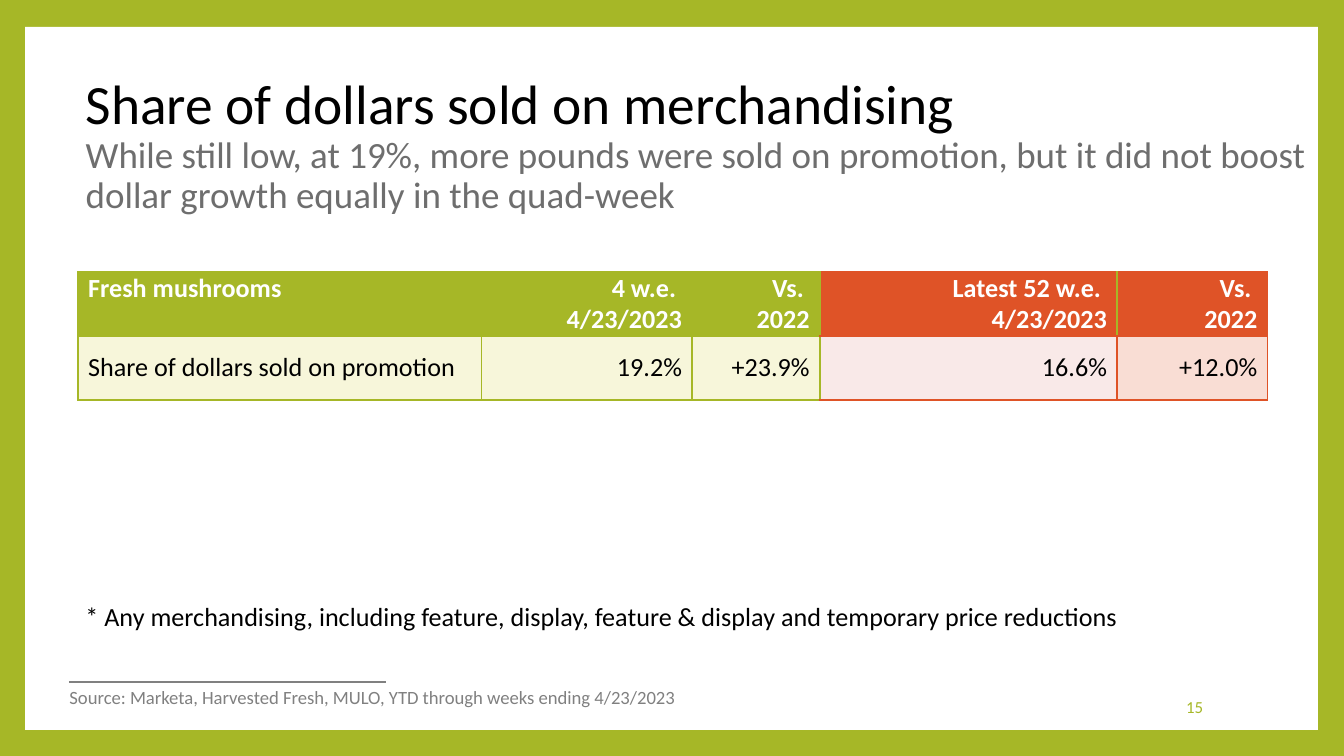
from pptx import Presentation
from pptx.dml.color import RGBColor
from pptx.enum.shapes import MSO_CONNECTOR, MSO_SHAPE
from pptx.enum.text import MSO_ANCHOR, PP_ALIGN
from pptx.oxml.ns import qn
from pptx.util import Pt
from lxml.etree import SubElement

PX = 5715  # EMU in one px, 160 px to the inch

GREEN = RGBColor(0xA6, 0xB7, 0x27)
ORANGE = RGBColor(0xDF, 0x53, 0x27)
CREAM = RGBColor(0xF7, 0xF6, 0xDA)
BLUSH = RGBColor(0xF9, 0xE9, 0xE8)
PEACH = RGBColor(0xF9, 0xDD, 0xD4)
WHITE = RGBColor(0xFF, 0xFF, 0xFF)
BLACK = RGBColor(0, 0, 0)
GRAY = RGBColor(0x80, 0x80, 0x80)
DARK_GRAY = RGBColor(0x6E, 0x6E, 0x6E)

COLUMNS = [480, 251, 152, 354, 179]
ROWS = [76, 76]
HEADER = ["Fresh mushrooms", "4 w.e. \n4/23/2023", "Vs. \n2022",
          " Latest 52 w.e. \n4/23/2023", "Vs. \n2022"]
SHARES = ["Share of dollars sold on promotion", "19.2%", "+23.9%", "16.6%", "+12.0%"]
FILLS = [[GREEN] * 3 + [ORANGE] * 2, [CREAM] * 3 + [BLUSH, PEACH]]
# Sides (left, right, top, bottom) drawn in orange; all others are green
ORANGE_SIDES = {(0, 3): "TB", (0, 4): "RTB", (1, 3): "RTB", (1, 4): "LRTB"}


def scale(*lengths):
    return [length * PX for length in lengths]


def set_values(target, values):
    for name, value in values.items():
        setattr(target, name, value)


def style_span(span, size, color, bold=False):
    set_values(span.font, {"name": "Calibri", "size": Pt(size), "bold": bold})
    span.font.color.rgb = color


def add_frame(page, box):
    """White panel and footer rule on the green page."""
    page.background.fill.solid()
    page.background.fill.fore_color.rgb = GREEN
    panel = page.shapes.add_shape(MSO_SHAPE.RECTANGLE, *scale(*box))
    panel.shadow.inherit = False
    panel.fill.solid()
    panel.fill.fore_color.rgb = WHITE
    panel.line.fill.background()

    left, top = box[0] + 52, box[1] + 780
    rule = page.shapes.add_connector(
        MSO_CONNECTOR.STRAIGHT, *scale(left, top, left + 377, top))
    rule.line.color.rgb = GRAY
    rule.line.width = Pt(0.79)
    SubElement(rule._element.spPr, qn("a:effectLst"))


def add_title(page, box, heading, subheading):
    title = page.shapes.title
    set_values(title, dict(zip(("left", "top", "width", "height"), scale(*box))))
    set_values(title.text_frame, {"word_wrap": True, "vertical_anchor": MSO_ANCHOR.MIDDLE})
    para = title.text_frame.paragraphs[0]
    set_values(para, {"alignment": PP_ALIGN.LEFT, "line_spacing": 0.9})
    span = para.add_run()
    span.text = heading
    style_span(span, 29.7, BLACK)
    para.add_line_break()
    span = para.add_run()
    span.text = subheading
    style_span(span, 19.8, DARK_GRAY)


def add_note(page, box, text, size, color, **frame_values):
    note = page.shapes.add_textbox(*scale(*box))
    set_values(note.text_frame, frame_values)
    para = note.text_frame.paragraphs[0]
    span = para.add_run()
    span.text = text
    style_span(span, size, color)
    return para


def set_borders(cell, orange_sides):
    properties = cell._tc.get_or_add_tcPr()
    for side in "LRTB":
        line = SubElement(properties, qn(f"a:ln{side}"), w=str(Pt(1)))
        fill = SubElement(line, qn("a:solidFill"))
        color = ORANGE if side in orange_sides else GREEN
        SubElement(fill, qn("a:srgbClr"), val=str(color))


def add_share_table(page, left, top):
    frame = page.shapes.add_table(
        len(ROWS), len(COLUMNS), *scale(left, top, sum(COLUMNS), sum(ROWS)))
    table = frame.table
    for column, width in zip(table.columns, COLUMNS):
        column.width = width * PX
    for row, height in zip(table.rows, ROWS):
        row.height = height * PX

    for r, texts in enumerate((HEADER, SHARES)):
        is_header = r == 0
        for c, text in enumerate(texts):
            cell = table.cell(r, c)
            set_values(cell, {
                "margin_left": 12 * PX, "margin_right": 12 * PX,
                "margin_top": 0, "margin_bottom": 0,
                "vertical_anchor": MSO_ANCHOR.TOP if is_header else MSO_ANCHOR.MIDDLE,
                "text": text})
            set_borders(cell, ORANGE_SIDES.get((r, c), ""))
            cell.fill.solid()
            cell.fill.fore_color.rgb = FILLS[r][c]
            for para in cell.text_frame.paragraphs:
                para.alignment = PP_ALIGN.RIGHT if c else PP_ALIGN.LEFT
                style_span(para.runs[0], 14, WHITE if is_header else BLACK, is_header)


def main():
    deck = Presentation()
    deck.slide_width, deck.slide_height = scale(1600, 900)
    page = deck.slides.add_slide(deck.slide_layouts[5])

    add_frame(page, (30, 32, 1539, 837))
    # The title placeholder exists first, so bring it in front of the panel
    page.shapes._spTree.append(page.shapes.title._element)
    add_title(page, (86, 87, 1486, 174), "Share of dollars sold on merchandising",
              "While still low, at 19%, more pounds were sold on promotion, "
              "but it did not boost dollar growth equally in the quad-week")
    number = add_note(page, (1224, 817, 224, 48), "15", 9, GREEN,
                      word_wrap=True, vertical_anchor=MSO_ANCHOR.MIDDLE)
    number.alignment = PP_ALIGN.RIGHT
    add_note(page, (67, 809, 770, 43),
             "Source: Marketa, Harvested Fresh, MULO, YTD through weeks ending 4/23/2023",
             10, GRAY, word_wrap=False)
    add_note(page, (86, 707, 1296, 54),
             "* Any merchandising, including feature, display, "
             "feature & display and temporary price reductions",
             14, BLACK, word_wrap=False)
    add_share_table(page, 93, 324)
    deck.save("out.pptx")


if __name__ == "__main__":
    main()
